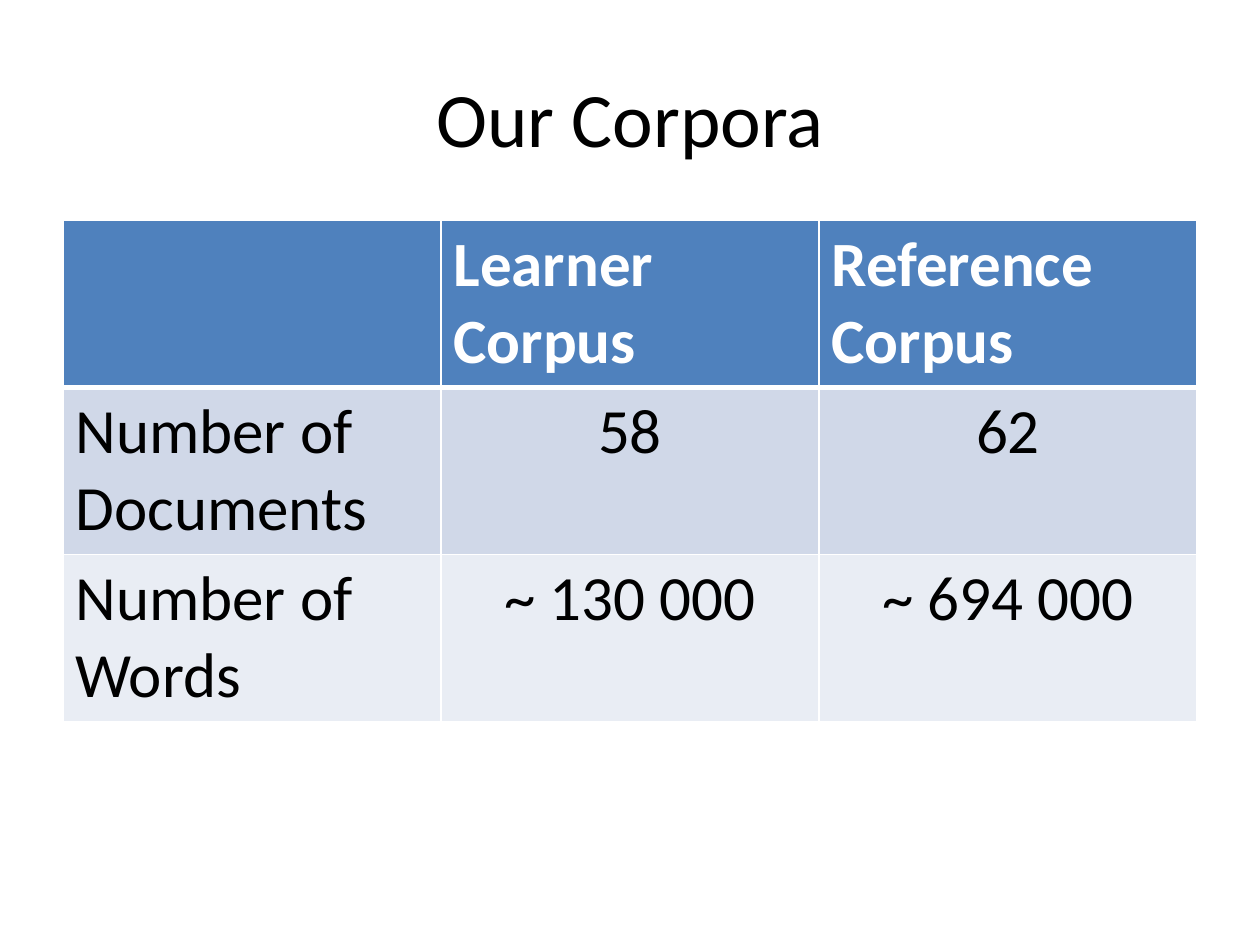
from dataclasses import dataclass

from lxml import etree
from pptx import Presentation
from pptx import util as u
from pptx.dml.color import RGBColor
from pptx.enum import text
from pptx.oxml import ns


@dataclass(frozen=True)
class Theme:
    font: str = "Calibri"
    title_size: int = 44
    cell_size: int = 36
    ink: str = "000000"
    paper: str = "FFFFFF"
    header: str = "4F81BD"
    bands: tuple = ("D0D8E8", "E9EDF4")
    thin: int = 1
    thick: int = 3


THEME = Theme()
WIDTH, HEIGHT = u.Inches(10), u.Inches(7.5)
MARGIN = 0.05
ROWS = [
    ["", "Learner Corpus", "Reference Corpus"],
    ["Number of Documents", "58", "62"],
    ["Number of Words", "~ 130 000", "~ 694 000"],
]


def area(x, y, w, h):
    return int(WIDTH * x), int(HEIGHT * y), int(WIDTH * w), int(HEIGHT * h)


def write(tf, words, size, color, bold=False, align=text.PP_ALIGN.LEFT):
    p = tf.paragraphs[0]
    p.alignment = align
    if not words:
        return
    r = p.add_run()
    r.text = words
    font_format = {"name": THEME.font, "size": u.Pt(size), "bold": bold}
    for name, value in font_format.items():
        setattr(r.font, name, value)
    r.font.color.rgb = RGBColor.from_string(color)


def add_title(s, words):
    tf = s.shapes.add_textbox(*area(MARGIN, 0.04, 1 - 2 * MARGIN, 1 / 6)).text_frame
    frame_format = {"word_wrap": True, "vertical_anchor": text.MSO_ANCHOR.MIDDLE}
    for name, value in frame_format.items():
        setattr(tf, name, value)
    write(tf, words, THEME.title_size, THEME.ink, align=text.PP_ALIGN.CENTER)


def set_borders(cell, widths):
    tc_pr = cell._tc.get_or_add_tcPr()
    for side, width in widths.items():
        ln = etree.SubElement(tc_pr, ns.qn(f"a:ln{side}"), w=str(u.Pt(width)))
        fill = etree.SubElement(ln, ns.qn("a:solidFill"))
        etree.SubElement(fill, ns.qn("a:srgbClr"), val=THEME.paper)


def format_cell(cell, words, row, col):
    is_header = row == 0
    set_borders(cell, {
        "L": THEME.thin,
        "R": THEME.thin,
        "T": THEME.thick if row == 1 else THEME.thin,
        "B": THEME.thick if is_header else THEME.thin,
    })
    color = THEME.header if is_header else THEME.bands[(row - 1) % 2]
    cell.fill.solid()
    cell.fill.fore_color.rgb = RGBColor.from_string(color)
    centred = not is_header and col > 0
    write(cell.text_frame, words, THEME.cell_size,
          THEME.paper if is_header else THEME.ink, bold=is_header,
          align=text.PP_ALIGN.CENTER if centred else text.PP_ALIGN.LEFT)


def add_table(s, rows):
    box = area(MARGIN, 7 / 30, 1 - 2 * MARGIN, 0.53)
    table = s.shapes.add_table(len(rows), len(rows[0]), *box).table
    for i, row in enumerate(rows):
        for j, words in enumerate(row):
            format_cell(table.cell(i, j), words, i, j)


def main():
    prs = Presentation()
    prs.slide_width, prs.slide_height = WIDTH, HEIGHT
    s = prs.slides.add_slide(prs.slide_layouts[6])
    add_title(s, "Our Corpora")
    add_table(s, ROWS)
    prs.save("out.pptx")


if __name__ == "__main__":
    main()
